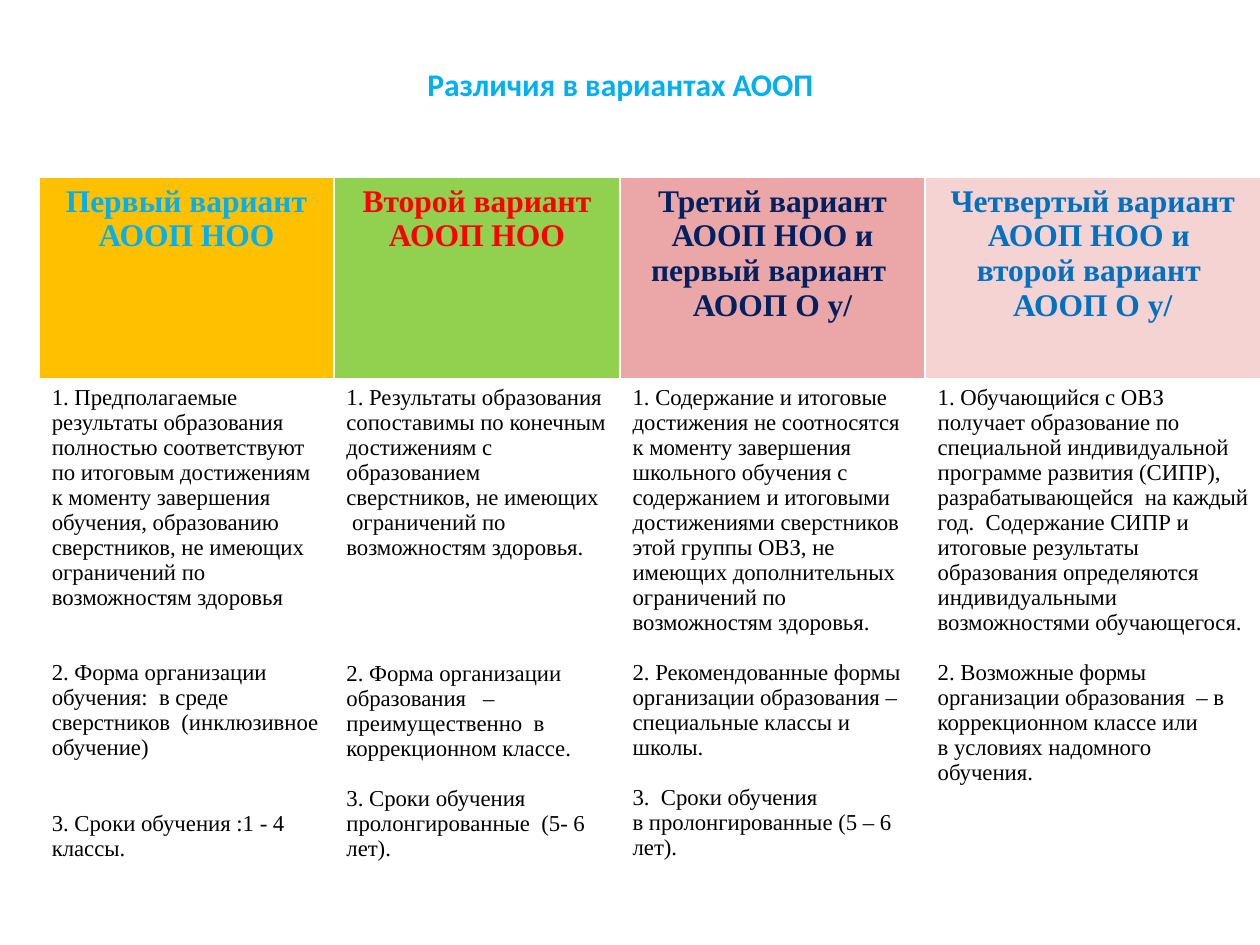
"""Builds a slide comparing the four variants of an adapted school programme."""
from pptx import Presentation
from pptx.dml.color import RGBColor
from pptx.enum.text import MSO_ANCHOR, PP_ALIGN
from pptx.util import Cm, Pt

TITLE = "Различия в вариантах АООП"
SERIF = "Times New Roman"
BODY_SIZE = 13
BLANK_LINE = 14.4
ROW_HEIGHTS = (4.06, 11.25)

VARIANTS = [
    {
        "width": 5.94, "fill": "FFC000", "color": "00B0F0",
        "heading": ["Первый вариант АООП НОО"],
        "items": [
            (0, "1. Предполагаемые результаты образования полностью соответствуют по итоговым "
                "достижениям к моменту завершения обучения, образованию сверстников, не имеющих "
                "ограничений по возможностям здоровья"),
            (2, "2. Форма организации обучения:  в среде сверстников  (инклюзивное обучение)"),
            (2, "3. Сроки обучения :1 - 4 классы."),
        ],
    },
    {
        "width": 5.77, "fill": "92D050", "color": "FF0000",
        "heading": ["Второй вариант АООП НОО"],
        "items": [
            (0, "1. Результаты образования  сопоставимы по конечным достижениям с образованием "
                "сверстников, не имеющих   ограничений по возможностям здоровья."),
            (4, "2. Форма организации образования   – преимущественно  в коррекционном классе."),
            (1, "3. Сроки обучения пролонгированные  (5- 6  лет)."),
        ],
    },
    {
        "width": 6.15, "fill": "EBA7A8", "color": "002060",
        "heading": ["Третий вариант", "АООП НОО и", "первый вариант ", "АООП О у/"],
        "items": [
            (0, "1. Содержание и итоговые достижения не соотносятся к моменту завершения школьного "
                "обучения с содержанием и итоговыми достижениями сверстников этой группы ОВЗ, "
                "не имеющих дополнительных ограничений по возможностям здоровья."),
            (1, "2. Рекомендованные формы организации образования – специальные классы и школы."),
            (1, "3.  Сроки обучения"),
            (0, "в пролонгированные (5 – 6 лет)."),
        ],
    },
    {
        "width": 6.76, "fill": "F5D3D3", "color": "0070C0",
        "heading": ["Четвертый вариант", "АООП НОО и ", "второй вариант ", "АООП О у/"],
        "items": [
            (0, "1. Обучающийся с ОВЗ получает образование по специальной индивидуальной программе "
                "развития (СИПР),  разрабатывающейся  на каждый год.  Содержание СИПР и итоговые "
                "результаты образования определяются индивидуальными возможностями обучающегося."),
            (1, "2. Возможные формы организации образования  – в коррекционном классе или"),
            (0, "в условиях надомного обучения."),
        ],
    },
]


def paint(fill, color):
    fill.solid()
    fill.fore_color.rgb = RGBColor.from_string(color)


def write(frame, lines, font, size, color, bold, align):
    frame.text = "\n".join(lines)
    for para in frame.paragraphs:
        para.alignment = align
        for span in para.runs:
            span.font.name = font
            span.font.size = Pt(size)
            span.font.bold = bold
            span.font.color.rgb = RGBColor.from_string(color)


def add_title(page):
    box = page.shapes.add_textbox(Cm(3.38), Cm(0.99), Cm(18.26), Cm(1.4))
    frame = box.text_frame
    frame.word_wrap = True
    frame.vertical_anchor = MSO_ANCHOR.MIDDLE
    write(frame, [TITLE], "Calibri", 18, "00B0F0", True, PP_ALIGN.CENTER)


def add_comparison(page):
    total_width = sum(variant["width"] for variant in VARIANTS)
    table = page.shapes.add_table(
        len(ROW_HEIGHTS), len(VARIANTS),
        Cm(0.79), Cm(3.58), Cm(total_width), Cm(sum(ROW_HEIGHTS)),
    ).table
    table.horz_banding = False
    for row, height in zip(table.rows, ROW_HEIGHTS):
        row.height = Cm(height)
    for index, variant in enumerate(VARIANTS):
        table.columns[index].width = Cm(variant["width"])
        header, body = table.cell(0, index), table.cell(1, index)
        paint(header.fill, variant["fill"])
        write(header.text_frame, variant["heading"], SERIF, 18,
              variant["color"], True, PP_ALIGN.CENTER)
        body.fill.background()
        gaps, texts = zip(*variant["items"])
        write(body.text_frame, texts, SERIF, BODY_SIZE, "000000", False, PP_ALIGN.LEFT)
        for para, gap in zip(body.text_frame.paragraphs, gaps):
            para.space_before = Pt(gap * BLANK_LINE)


def main():
    deck = Presentation()
    deck.slide_width, deck.slide_height = Cm(25.4), Cm(19.05)
    page = deck.slides.add_slide(deck.slide_layouts[6])
    add_title(page)
    add_comparison(page)
    deck.save("out.pptx")


if __name__ == "__main__":
    main()
